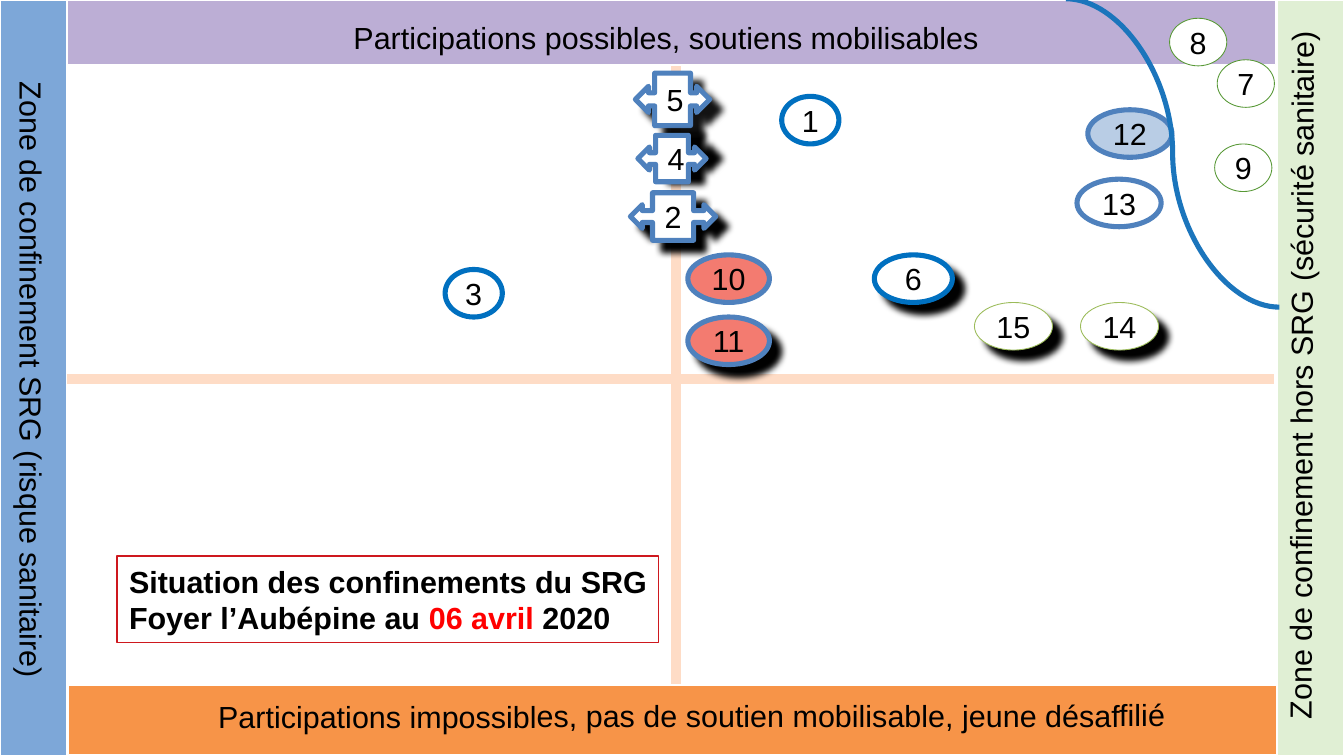
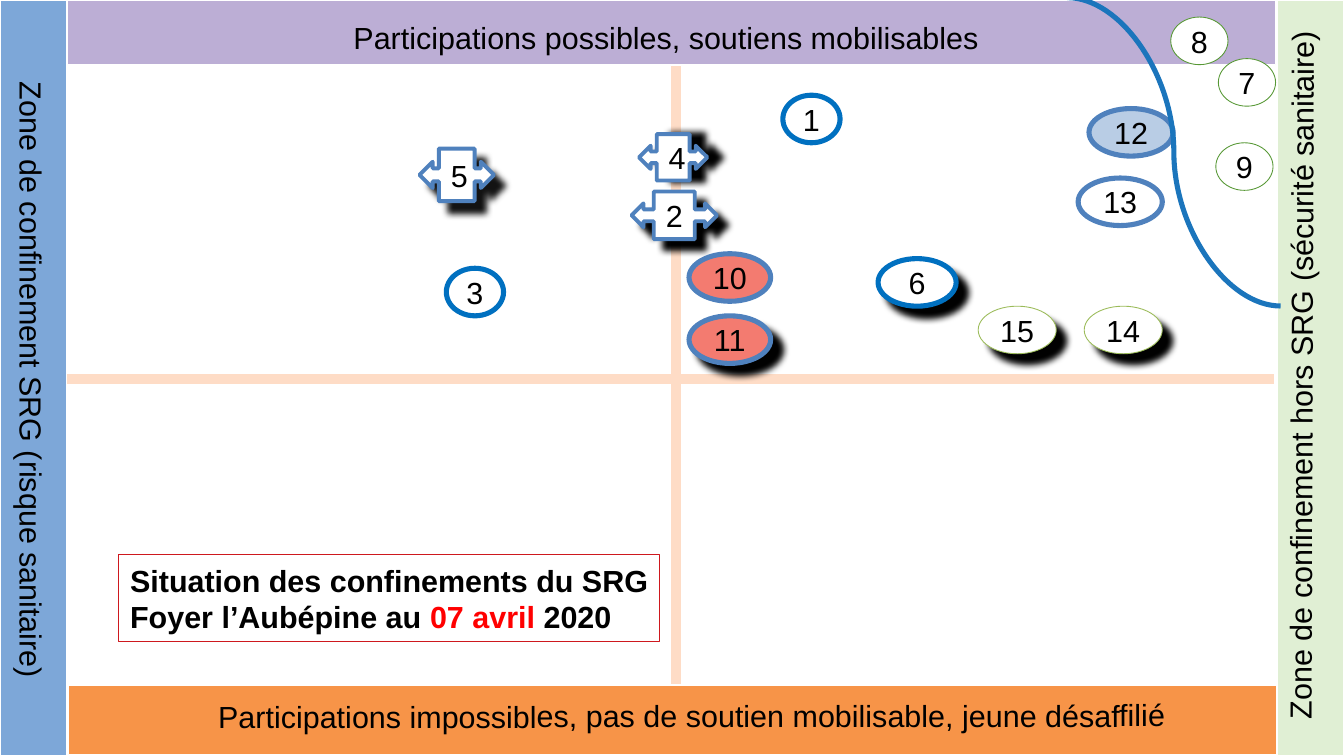
from lxml.etree import SubElement as Sub
from pptx import Presentation
from pptx.dml.color import RGBColor as RGB
from pptx.enum.shapes import MSO_CONNECTOR as Link, MSO_SHAPE as Kind
from pptx.enum.text import MSO_ANCHOR as Anchor, PP_ALIGN as Align
from pptx.oxml.ns import qn
from pptx.util import Pt

WIDE, HIGH = 793.44, 446.4
SIDE = 39.6
FONT, SIZE = "Arial", 18

WHITE, BLACK = RGB(255, 255, 255), RGB(0, 0, 0)
RED, CRIMSON = RGB(0xFF, 0, 0), RGB(0xCE, 0x18, 0x1E)
ORANGE, MAUVE = RGB(0xF7, 0x94, 0x48), RGB(0xBC, 0xAE, 0xD5)
SKY, MINT = RGB(0x7D, 0xA7, 0xD8), RGB(0xE0, 0xEF, 0xD4)
PEACH, CORAL = RGB(0xFE, 0xDC, 0xC6), RGB(0xF3, 0x7B, 0x70)
STEEL, PALE = RGB(0x4F, 0x81, 0xBD), RGB(0xB9, 0xCD, 0xE5)
AZURE, COBALT = RGB(0, 0x70, 0xC0), RGB(0x1B, 0x75, 0xBC)
LEAF, LIME = RGB(0x57, 0x98, 0x35), RGB(0x9B, 0xBB, 0x59)

# fill, box
BANDS = [
    (ORANGE, (40.3, 404.6, 713.5, 41)),
    (MAUVE, (SIDE, 0, 713.5, 38.2)),
    (SKY, (0, 0, SIDE, HIGH)),
    (MINT, (WIDE - SIDE, 0, SIDE, HIGH)),
]
# text, centre, size, angle
LABELS = [
    ("Zone de confinement SRG (risque sanitaire)", (19.8, 230.8), (379.4, 26.6), 90),
    ("Participations impossibles, pas de soutien mobilisable, jeune désaffilié",
     (410.8, 421.5), (578.2, 26.6), 359.9),
    ("Zone de confinement hors SRG (sécurité sanitaire)",
     (770.4, 219.2), (424.8, 33.8), 270.2),
    ("Participations possibles, soutiens mobilisables", (394.2, 21.2), (385.2, 26.6), 0),
]
AXES = [(398.9, 403.9, 398.9, 38.9), (SIDE, 223.9, 752.4, 223.9)]

# kind, fill, line, weight, wrap
ARROW = Kind.LEFT_RIGHT_ARROW_CALLOUT
STYLES = {
    "arrow": (ARROW, WHITE, STEEL, 3, False),
    "tight": (ARROW, WHITE, STEEL, 3, True),
    "blue": (Kind.OVAL, WHITE, AZURE, 3, False),
    "red": (Kind.OVAL, CORAL, STEEL, 3, False),
    "steel": (Kind.OVAL, WHITE, STEEL, 3, False),
    "pale": (Kind.OVAL, PALE, STEEL, 3, False),
    "leaf": (Kind.OVAL, WHITE, LEAF, 0.5, False),
    "lime": (Kind.OVAL, WHITE, LIME, 0.5, False),
}
# number: style, box
MARKS = {
    2: ("arrow", (372.2, 113.8, 50.4, 28.1)),
    3: ("blue", (262.8, 159.1, 33.8, 28.1)),
    1: ("blue", (461.5, 56.9, 33.8, 28.1)),
    10: ("red", (406.1, 150.5, 48.2, 28.1)),
    11: ("red", (406.1, 187.2, 48.2, 28.1)),
    13: ("steel", (635.8, 105.8, 49.7, 28.1)),
    12: ("pale", (642.2, 64.8, 49.7, 28.1)),
    7: ("leaf", (718.6, 35.3, 33.8, 28.1)),
    8: ("leaf", (690.5, 10.8, 33.8, 28.1)),
    9: ("leaf", (717.1, 85, 33.8, 28.1)),
    5: ("tight", (375.1, 43.2, 43.9, 31)),
    4: ("tight", (376.6, 79.9, 40.3, 27.4)),
    6: ("blue", (516.2, 150.5, 46.1, 28.1)),
    14: ("lime", (637.9, 178.6, 46.1, 28.1)),
    15: ("lime", (575.3, 178.6, 46.1, 28.1)),
}
# number: opacity in percent, angle in degrees
SHADES = {2: (100, 45), 11: (100, 45), 5: (92, 45), 4: (100, 0),
          6: (100, 45), 14: (100, 45), 15: (100, 45)}
CURVE = (629.3, -0.7, 755.3, 181.4)
TITLE = (69.1, 328.3, 319.7, 51.1)

DAYS = [
    {"date": "06 avril ", "shift": (0, 0), "moves": {}, "arrow": 3},
    {"date": "07 avril ", "shift": (0.7, -0.7), "arrow": 2.3,
     "moves": {5: (-127.4, 44.6), 6: (2.2, 2.2), 14: (2.2, 2.2), 15: (2.2, 2.2)}},
]


def pts(nums):
    return [Pt(n) for n in nums]


def slid(box, step):
    return (box[0] + step[0], box[1] + step[1], *box[2:])


def style(run, color=BLACK, bold=False):
    run.font.name, run.font.size = FONT, Pt(SIZE)
    run.font.color.rgb, run.font.bold = color, bold


def block(page, kind, box, fill, line, weight):
    shape = page.shapes.add_shape(kind, *pts(box))
    shape.shadow.inherit = False
    shape.fill.solid()
    shape.fill.fore_color.rgb = fill
    shape.line.color.rgb = line
    shape.line.width = Pt(weight)
    return shape


def link(page, kind, ends, color, weight):
    line = page.shapes.add_connector(kind, *pts(ends))
    line.line.color.rgb = color
    line.line.width = Pt(weight)
    Sub(line.element.spPr, qn("a:effectLst"))


def shade(shape, alpha, angle):
    """Give the shape a black outer shadow."""
    fx = shape.element.spPr.find(qn("a:effectLst"))
    outer = Sub(fx, qn("a:outerShdw"), blurRad=str(Pt(4)), dist=str(Pt(8.5)),
                dir=str(angle * 60000), algn="tl", rotWithShape="0")
    color = Sub(outer, qn("a:srgbClr"), val=str(BLACK))
    Sub(color, qn("a:alpha"), val=str(alpha * 1000))


def frame(page):
    """Draw the bands, labels and axes that all slides share."""
    for fill, box in BANDS:
        block(page, Kind.RECTANGLE, box, fill, WHITE, 0.75)
    for text, (x, y), (w, h), angle in LABELS:
        label = page.shapes.add_textbox(*pts((x - w / 2, y - h / 2, w, h)))
        label.rotation = angle
        label.text_frame.word_wrap = True
        label.text_frame.text = text
        style(label.text_frame.paragraphs[0].runs[0])
    for ends in AXES:
        link(page, Link.STRAIGHT, ends, PEACH, 6)


def share(page, layout):
    """Move everything drawn on the slide to its layout."""
    for old in list(layout.placeholders):
        layout.shapes.element.remove(old.element)
    for shape in list(page.shapes):
        layout.shapes.element.append(shape.element)


def mark(page, num, day):
    name, box = MARKS[num]
    kind, fill, line, weight, wrap = STYLES[name]
    if kind == ARROW:
        weight = day["arrow"]
    box = slid(box, day["moves"].get(num, day["shift"]))
    shape = block(page, kind, box, fill, line, weight)
    if num in SHADES:
        shade(shape, *SHADES[num])
    body = shape.text_frame
    body.text = str(num)
    body.word_wrap = wrap
    body.vertical_anchor = Anchor.MIDDLE
    body.paragraphs[0].alignment = Align.CENTER
    style(body.paragraphs[0].runs[0])


def title(page, day):
    box = slid(TITLE, day["shift"])
    body = block(page, Kind.RECTANGLE, box, WHITE, CRIMSON, 0.75).text_frame
    body.word_wrap = False
    body.vertical_anchor = Anchor.MIDDLE
    rows = [[("Situation des confinements du SRG", BLACK)],
            [("Foyer l’Aubépine au ", BLACK), (day["date"], RED), ("2020", BLACK)]]
    for i, row in enumerate(rows):
        para = body.add_paragraph() if i else body.paragraphs[0]
        para.alignment = Align.LEFT
        for text, color in row:
            run = para.add_run()
            run.text = text
            style(run, color, True)


def main():
    deck = Presentation()
    deck.slide_width, deck.slide_height = pts((WIDE, HIGH))
    blank = deck.slide_layouts[6]
    for i, day in enumerate(DAYS):
        page = deck.slides.add_slide(blank)
        if i == 0:
            frame(page)
            share(page, blank)
        for num in MARKS:
            mark(page, num, day)
        dx, dy = day["shift"]
        x1, y1, x2, y2 = CURVE
        link(page, Link.CURVE, (x1 + dx, y1 + dy, x2 + dx, y2 + dy), COBALT, 3)
        title(page, day)
    deck.save("out.pptx")


if __name__ == "__main__":
    main()
